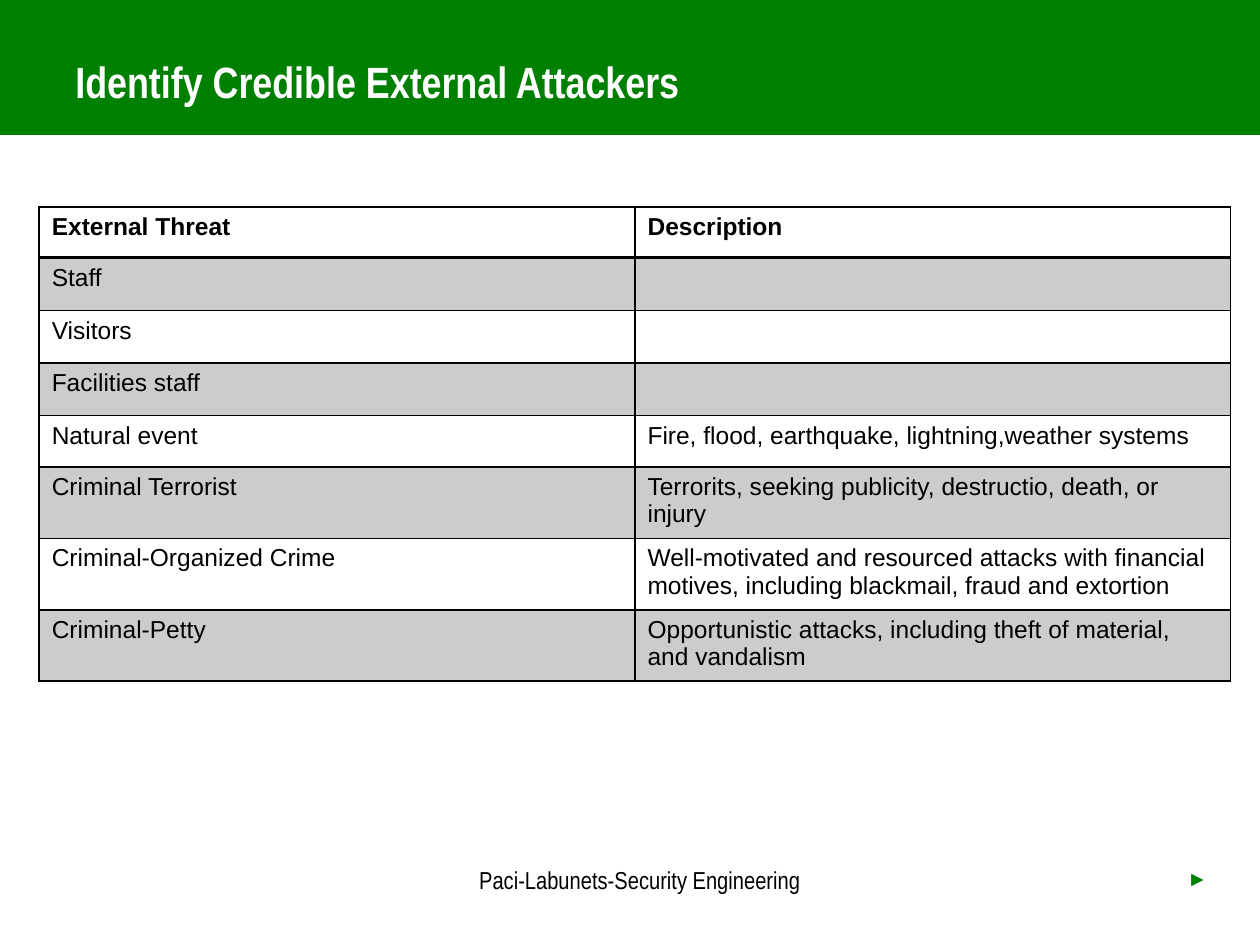
from lxml.etree import SubElement
from pptx import Presentation
from pptx.dml.color import RGBColor
from pptx.enum.shapes import MSO_SHAPE
from pptx.enum.text import MSO_ANCHOR, PP_ALIGN
from pptx.oxml.ns import qn
from pptx.util import Cm, Pt

GREEN = RGBColor(0x00, 0x80, 0x00)
WHITE = RGBColor(0xFF, 0xFF, 0xFF)
BLACK = RGBColor(0x00, 0x00, 0x00)
GREY = RGBColor(0xCC, 0xCC, 0xCC)

# Row height in cm, threat, description
ROWS = [
    (1.03, "External Threat", "Description"),
    (1.06, "Staff", ""),
    (1.06, "Visitors", ""),
    (1.06, "Facilities staff", ""),
    (1.03, "Natural event", "Fire, flood, earthquake, lightning,weather systems"),
    (1.36, "Criminal Terrorist",
     "Terrorits, seeking publicity, destructio, death, or injury"),
    (1.36, "Criminal-Organized Crime",
     "Well-motivated and resourced attacks with financial motives, "
     "including blackmail, fraud and extortion"),
    (1.36, "Criminal-Petty",
     "Opportunistic attacks, including theft of material, and vandalism"),
]


def style(para, size, color, name="Arial Narrow", bold=False):
    font = para.font
    font.name, font.size, font.bold = name, Pt(size), bold
    font.color.rgb = color


def add_text(slide, box, text, size, color, align=PP_ALIGN.LEFT,
             anchor=MSO_ANCHOR.TOP, bold=False):
    frame = slide.shapes.add_textbox(*box).text_frame
    frame.word_wrap = True
    frame.vertical_anchor = anchor
    para = frame.paragraphs[0]
    para.text, para.alignment = text, align
    style(para, size, color, bold=bold)


def add_header(slide, left, top, width, height):
    # Green band
    band = slide.shapes.add_shape(MSO_SHAPE.RECTANGLE, left, top, width, height)
    band.shadow.inherit = False
    band.fill.solid()
    band.fill.fore_color.rgb = GREEN
    band.line.fill.background()
    # Title
    box = left + Cm(1.27), top + Cm(0.76), Cm(16.84), Cm(1.75)
    add_text(slide, box, "Identify Credible External Attackers", 25, WHITE,
             anchor=MSO_ANCHOR.MIDDLE, bold=True)


def add_border(cell, **widths):
    props = cell._tc.get_or_add_tcPr()
    for side in "LRTB":
        line = SubElement(props, qn(f"a:ln{side}"),
                          w=str(Pt(widths.get(side, 1))))
        fill = SubElement(line, qn("a:solidFill"))
        SubElement(fill, qn("a:srgbClr"), val=str(BLACK))


def add_threats(slide, left, top, width):
    height = Cm(sum(row[0] for row in ROWS))
    table = slide.shapes.add_table(len(ROWS), 2, left, top, width, height).table
    for i, (tall, *texts) in enumerate(ROWS):
        table.rows[i].height = Cm(tall)
        for j, text in enumerate(texts):
            cell = table.cell(i, j)
            para = cell.text_frame.paragraphs[0]
            if text:
                para.text = text
            style(para, 14, BLACK, "Arial", bold=i == 0)
            # Heavy rule between the heading and the first row
            add_border(cell, T=2 if i == 1 else 1, B=2 if i == 0 else 1)
            cell.fill.solid()
            cell.fill.fore_color.rgb = GREY if i % 2 else WHITE


def add_footer(slide, left, top, width, height):
    # Course name
    add_text(slide, (left + Cm(6.7), top, Cm(12.4), height),
             "Paci-Labunets-Security Engineering", 14, BLACK, PP_ALIGN.CENTER)
    # Page marker
    mark = Cm(2.5)
    add_text(slide, (left + width - Cm(0.8) - mark, top, mark, height),
             "►", 12, GREEN, PP_ALIGN.RIGHT)


def main():
    deck = Presentation()
    deck.slide_width, deck.slide_height = Cm(25.4), Cm(19.05)
    slide = deck.slides.add_slide(deck.slide_layouts[6])
    add_header(slide, 0, 0, deck.slide_width, Cm(2.72))
    add_threats(slide, Cm(0.79), Cm(4.17), Cm(24.02))
    add_footer(slide, 0, Cm(17.32), deck.slide_width, Cm(1.27))
    deck.save("out.pptx")


if __name__ == "__main__":
    main()
